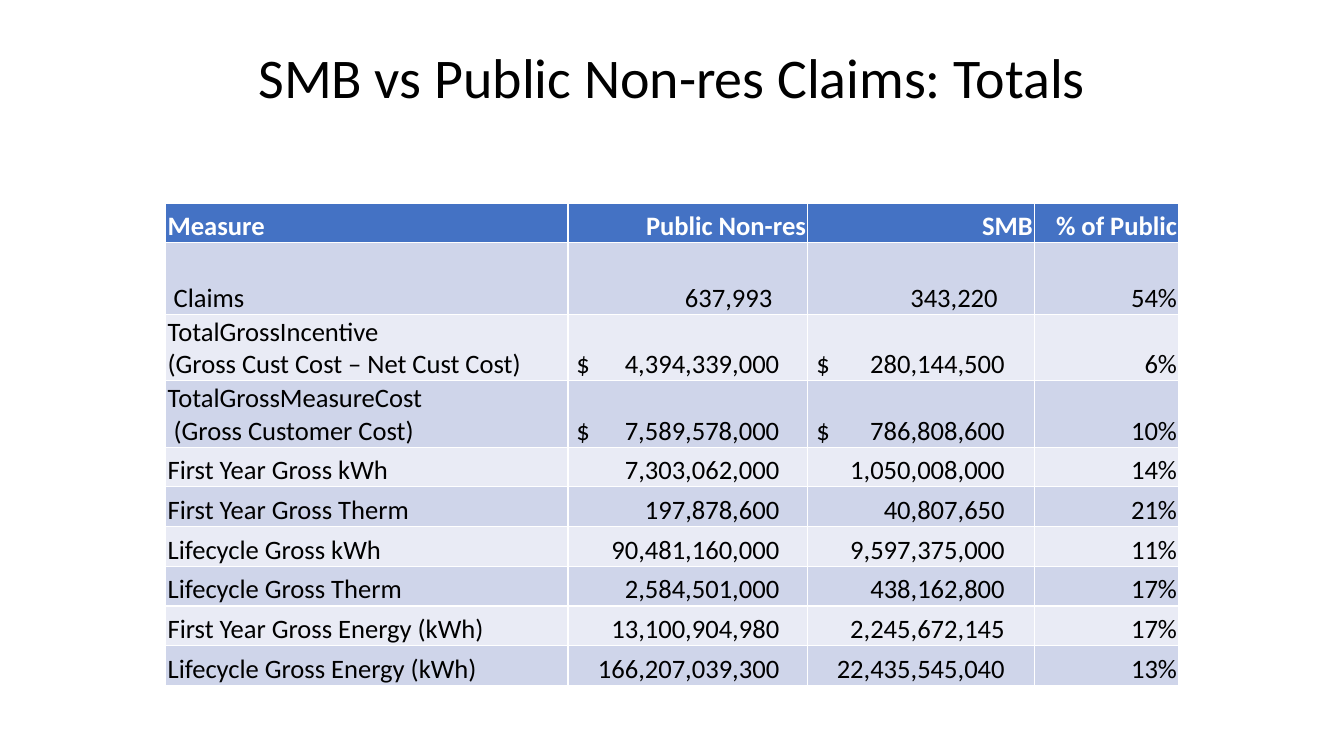
"""Build the slide comparing SMB claims with public non-residential claims."""
from pptx import Presentation
from pptx.dml.color import RGBColor
from pptx.enum.text import MSO_ANCHOR as Anchor, PP_ALIGN as Align
from pptx.util import Pt
from lxml.etree import SubElement
from pptx.oxml.ns import qn

BLACK = RGBColor(0x00, 0x00, 0x00)
WHITE = RGBColor(0xFF, 0xFF, 0xFF)
HEADER_BLUE = RGBColor(0x44, 0x72, 0xC4)
BANDS = (RGBColor(0xCF, 0xD5, 0xEA), RGBColor(0xE9, 0xEB, 0xF5))
FONT = "Calibri"

HEADINGS = ("Measure", "Public Non-res", "SMB", "% of Public")
CLAIM_TOTALS = (
    (" Claims", "637,993", "343,220", "54%"),
    ("TotalGrossIncentive\n(Gross Cust Cost – Net Cust Cost)",
     "$\t4,394,339,000", "$\t280,144,500", "6%"),
    ("TotalGrossMeasureCost\n (Gross Customer Cost)",
     "$\t7,589,578,000", "$\t786,808,600", "10%"),
    ("First Year Gross kWh", "7,303,062,000", "1,050,008,000", "14%"),
    ("First Year Gross Therm", "197,878,600", "40,807,650", "21%"),
    ("Lifecycle Gross kWh", "90,481,160,000", "9,597,375,000", "11%"),
    ("Lifecycle Gross Therm", "2,584,501,000", "438,162,800", "17%"),
    ("First Year Gross Energy (kWh)", "13,100,904,980", "2,245,672,145", "17%"),
    ("Lifecycle Gross Energy (kWh)", "166,207,039,300", "22,435,545,040", "13%"),
)
COLUMN_WIDTHS = (287.3, 171.4, 162, 103)
NUMBER_INSETS = (1.4, 20.5, 21.5, 1.4)
ROW_HEIGHT, CLAIMS_HEIGHT, TWO_LINE_HEIGHT = 28.4, 51, 47.5
EDGE, DOLLAR_INSET = 1.4, 6


def add_run(paragraph, text, size, color, bold=False):
    """Add one formatted run to a paragraph."""
    run = paragraph.add_run()
    run.text = text
    run.font.name = FONT
    run.font.size = Pt(size)
    run.font.bold = bold
    run.font.color.rgb = color


def add_right_tab(paragraph, position):
    """Give a paragraph one right-aligned tab stop."""
    tabs = SubElement(paragraph._p.get_or_add_pPr(), qn("a:tabLst"))
    SubElement(tabs, qn("a:tab"), pos=str(Pt(position)), algn="r")


def fill_cell(cell, text, fill, color, align, bold=False, right=EDGE):
    """Write the lines of a cell and set its fill and insets."""
    cell.fill.solid()
    cell.fill.fore_color.rgb = fill
    cell.vertical_anchor = Anchor.BOTTOM
    cell.margin_left = cell.margin_top = Pt(EDGE)
    cell.margin_right, cell.margin_bottom = Pt(right), Pt(0)
    for index, line in enumerate(text.split("\n")):
        frame = cell.text_frame
        paragraph = frame.add_paragraph() if index else frame.paragraphs[0]
        paragraph.alignment = align
        add_run(paragraph, line, 19, color, bold)


def add_title(slide, text):
    """Place and write the slide title."""
    title = slide.shapes.title
    title.left, title.top = Pt(79.2), Pt(13.7)
    title.width, title.height = Pt(801.4), Pt(87.8)
    title.text_frame.vertical_anchor = Anchor.MIDDLE
    paragraph = title.text_frame.paragraphs[0]
    paragraph.alignment = Align.CENTER
    paragraph.line_spacing = 0.9
    add_run(paragraph, text, 40, BLACK)


def add_totals_table(slide):
    """Add the table of claim totals."""
    heights = [ROW_HEIGHT, CLAIMS_HEIGHT] + [
        TWO_LINE_HEIGHT if "\n" in totals[0] else ROW_HEIGHT
        for totals in CLAIM_TOTALS[1:]]
    table = slide.shapes.add_table(
        len(heights), len(HEADINGS), Pt(118.4), Pt(145),
        Pt(sum(COLUMN_WIDTHS)), Pt(sum(heights))).table
    for column, width in zip(table.columns, COLUMN_WIDTHS):
        column.width = Pt(width)
    for row, height in zip(table.rows, heights):
        row.height = Pt(height)

    for col, heading in enumerate(HEADINGS):
        align = Align.RIGHT if col else Align.LEFT
        fill_cell(table.cell(0, col), heading, HEADER_BLUE, WHITE, align, True)
    for row, totals in enumerate(CLAIM_TOTALS, start=1):
        for col, text in enumerate(totals):
            cell = table.cell(row, col)
            has_dollar = text.startswith("$")
            align = Align.RIGHT if col and not has_dollar else Align.LEFT
            right = EDGE if has_dollar else NUMBER_INSETS[col]
            if row == 1 and col in (1, 2):
                right += 5
            fill_cell(cell, text, BANDS[(row - 1) % 2], BLACK, align, right=right)
            if has_dollar:
                cell.margin_left = Pt(DOLLAR_INSET)
                number_end = COLUMN_WIDTHS[col] - NUMBER_INSETS[col]
                add_right_tab(cell.text_frame.paragraphs[0],
                              number_end - DOLLAR_INSET)


def main():
    """Create and save the presentation."""
    presentation = Presentation()
    presentation.slide_width, presentation.slide_height = Pt(960), Pt(540)
    slide = presentation.slides.add_slide(presentation.slide_layouts[5])
    add_title(slide, "SMB vs Public Non-res Claims: Totals")
    add_totals_table(slide)
    presentation.save("out.pptx")


if __name__ == "__main__":
    main()
